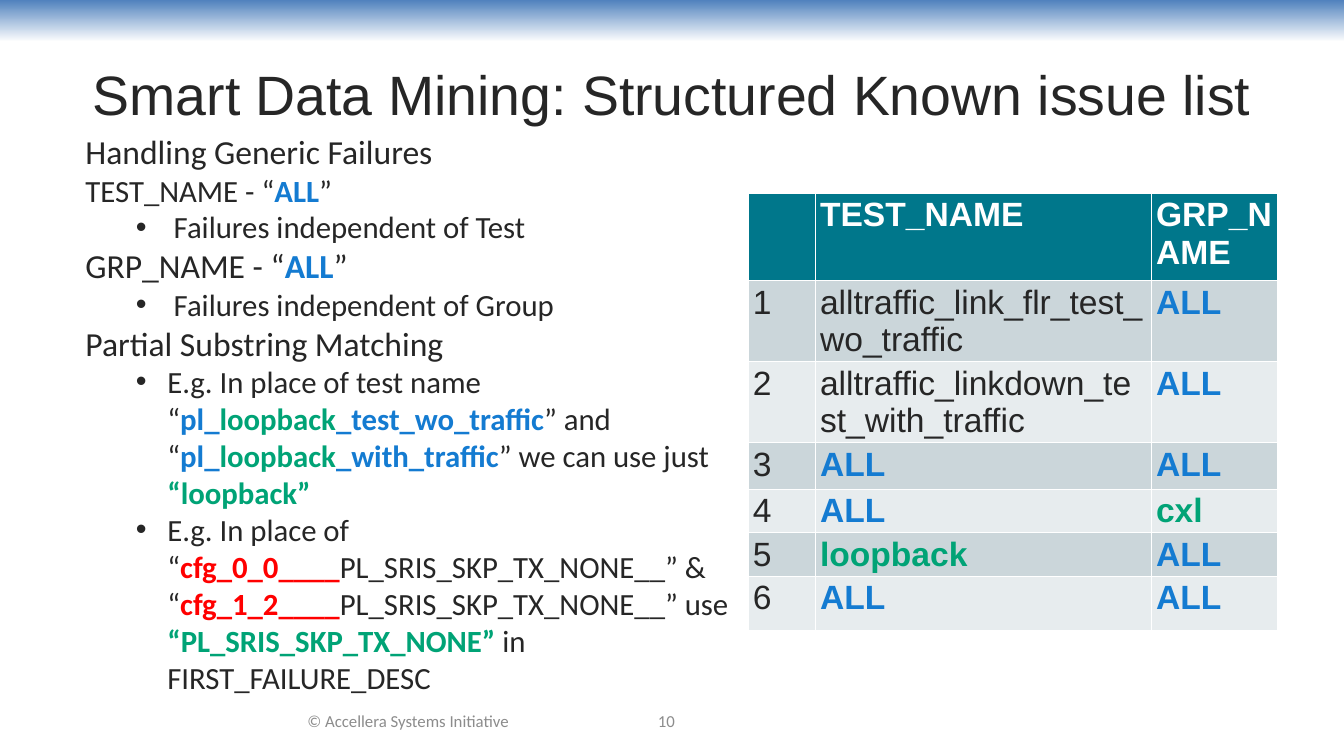
from dataclasses import dataclass
from typing import Any

from lxml import etree
from pptx import Presentation
from pptx.dml.color import RGBColor
from pptx.enum.shapes import MSO_SHAPE
from pptx.enum.text import MSO_ANCHOR, PP_ALIGN
from pptx.oxml.ns import qn
from pptx.util import Pt

RECT = MSO_SHAPE.RECTANGLE
TOP, MIDDLE = MSO_ANCHOR.TOP, MSO_ANCHOR.MIDDLE
LEFT, CENTER = PP_ALIGN.LEFT, PP_ALIGN.CENTER
SIDES = ("a:lnL", "a:lnR", "a:lnT", "a:lnB")


@dataclass(frozen=True)
class Theme:
    ink: str = "262626"
    blue: str = "147BD1"
    green: str = "00A376"
    red: str = "FF0000"
    gray: str = "8C8C8C"
    white: str = "FFFFFF"
    sky: str = "4F81BD"
    head: str = "00778B"
    bands: tuple[str, str] = ("CBD6DA", "E7ECEE")
    sans: str = "Arial"
    text: str = "Calibri"
    title: float = 39.6
    large: float = 24
    body: float = 22
    small: float = 12


THEME = Theme()


@dataclass(frozen=True)
class Run:
    text: str
    color: str = THEME.ink
    bold: bool = False


@dataclass(frozen=True)
class Para:
    runs: tuple[Run, ...]
    size: float = THEME.body
    left: float = 0
    hang: float = 0
    align: Any = LEFT


@dataclass(frozen=True)
class Box:
    left: float
    top: float
    width: float
    height: float
    paras: tuple[Para, ...]
    face: str = THEME.text
    anchor: Any = MIDDLE


def strong(text: str, color: str = THEME.blue) -> Run:
    return Run(text, color, True)


def label(text: str, size: float, color: str) -> tuple[Para, ...]:
    return (Para((Run(text, color),), size, align=CENTER),)


def point(left: float, hang: float, *runs: Run) -> Para:
    return Para(runs, left=left, hang=hang)


ALL, CXL, LOOP = strong("ALL"), strong("cxl", THEME.green), strong("loopback", THEME.green)
PL = strong("pl_")

BODY = (
    Para((Run("Handling Generic Failures"),), THEME.large),
    Para((Run("TEST_NAME - “"), ALL, Run("”"))),
    point(63, 27, Run("Failures independent of Test")),
    Para((Run("GRP_NAME - “"), ALL, Run("”")), THEME.large),
    point(63, 27, Run("Failures independent of Group")),
    Para((Run("Partial Substring Matching"),), THEME.large),
    point(58.5, 22.5, Run("E.g. In place of test name “"),
          PL, LOOP, strong("_test_wo_traffic"), Run("” and “"),
          PL, LOOP, strong("_with_traffic"), Run("” we can use just "),
          strong("“loopback” ", THEME.green)),
    point(58.5, 22.5, Run("E.g. In place of “"),
          strong("cfg_0_0____", THEME.red), Run("PL_SRIS_SKP_TX_NONE__” & “"),
          strong("cfg_1_2____", THEME.red), Run("PL_SRIS_SKP_TX_NONE__” use "),
          strong("“PL_SRIS_SKP_TX_NONE” ", THEME.green), Run("in FIRST_FAILURE_DESC")),
)

BOXES = (
    Box(48, 21.6, 864, 90,
        label("Smart Data Mining: Structured Known issue list", THEME.title, THEME.ink),
        THEME.sans),
    Box(175.7, 500.4, 231.8, 28.8,
        label("© Accellera Systems Initiative", THEME.small, THEME.gray)),
    Box(383.8, 500.4, 184.3, 28.8, label("10", THEME.small, THEME.gray)),
    Box(54, 90, 480.2, 441.4, BODY, anchor=TOP),
)

HEADS = (None, strong("TEST_NAME", THEME.white), strong("GRP_NAME", THEME.white))
PAIRS = (
    (Run("alltraffic_link_flr_test_wo_traffic"), ALL),
    (Run("alltraffic_linkdown_test_with_traffic"), ALL),
    (ALL, ALL),
    (ALL, CXL),
    (LOOP, ALL),
    (ALL, ALL),
)
COLS = (48, 240, 90)
ROWS = (62.3, 43.2, 47.5, 33.1, 30.2, 27.4, 38.9)


def apply(target: Any, values: dict[str, Any]) -> None:
    for name, value in values.items():
        setattr(target, name, value)


def rgb(color: str) -> RGBColor:
    return RGBColor.from_string(color)


def write(para: Any, run: Run, size: float, face: str) -> None:
    part = para.add_run()
    part.text = run.text
    apply(part.font, {"name": face, "size": Pt(size), "bold": run.bold})
    part.font.color.rgb = rgb(run.color)


def bullet(para: Any, left: float, hang: float) -> None:
    """Give the paragraph a round bullet with a hanging indent."""
    props = para._p.get_or_add_pPr()
    props.set("marL", str(Pt(left)))
    props.set("indent", str(-Pt(hang)))
    etree.SubElement(props, qn("a:buFont"), typeface=THEME.sans)
    etree.SubElement(props, qn("a:buChar"), char="•")


def add_box(slide: Any, box: Box) -> None:
    shape = slide.shapes.add_textbox(
        Pt(box.left), Pt(box.top), Pt(box.width), Pt(box.height))
    frame = shape.text_frame
    apply(frame, {"word_wrap": True, "vertical_anchor": box.anchor})
    for i, item in enumerate(box.paras):
        para = frame.add_paragraph() if i else frame.paragraphs[0]
        if item.hang:
            bullet(para, item.left, item.hang)
        para.alignment = item.align
        for run in item.runs:
            write(para, run, item.size, box.face)


def add_band(slide: Any) -> None:
    band = slide.shapes.add_shape(RECT, 0, 0, Pt(960), Pt(30))
    band.shadow.inherit = False
    band.line.fill.background()
    band.fill.gradient()
    band.fill.gradient_angle = 270
    for i, (stop, color) in enumerate(zip(band.fill.gradient_stops, (THEME.sky, THEME.white))):
        stop.color.rgb = rgb(color)
        stop.position = i


def edge(cell: Any) -> None:
    """Draw thin white borders; call before the cell gets its fill."""
    props = cell._tc.get_or_add_tcPr()
    for side in SIDES:
        line = etree.SubElement(props, qn(side), w=str(Pt(0.5)))
        fill = etree.SubElement(line, qn("a:solidFill"))
        etree.SubElement(fill, qn("a:srgbClr"), val=THEME.white)


def add_grid(slide: Any) -> None:
    lines = [HEADS] + [(Run(str(n)), *pair) for n, pair in enumerate(PAIRS, 1)]
    table = slide.shapes.add_table(
        len(ROWS), len(COLS), Pt(534.2), Pt(138.2), Pt(sum(COLS)), Pt(sum(ROWS))).table
    for col, width in zip(table.columns, COLS):
        col.width = Pt(width)
    pads = {"margin_left": Pt(3.6), "margin_right": Pt(3.6),
            "margin_top": Pt(2.2), "margin_bottom": Pt(2.2)}
    for r, (row, height, line) in enumerate(zip(table.rows, ROWS, lines)):
        row.height = Pt(height)
        for cell, run in zip(row.cells, line):
            edge(cell)
            apply(cell, pads)
            cell.fill.solid()
            cell.fill.fore_color.rgb = rgb(THEME.bands[(r - 1) % 2] if r else THEME.head)
            if run:
                write(cell.text_frame.paragraphs[0], run, THEME.large, THEME.sans)


def main() -> None:
    deck = Presentation()
    apply(deck, {"slide_width": Pt(960), "slide_height": Pt(540)})
    slide = deck.slides.add_slide(deck.slide_layouts[6])
    add_band(slide)
    add_grid(slide)
    for box in BOXES:
        add_box(slide, box)
    deck.save("out.pptx")


if __name__ == "__main__":
    main()
